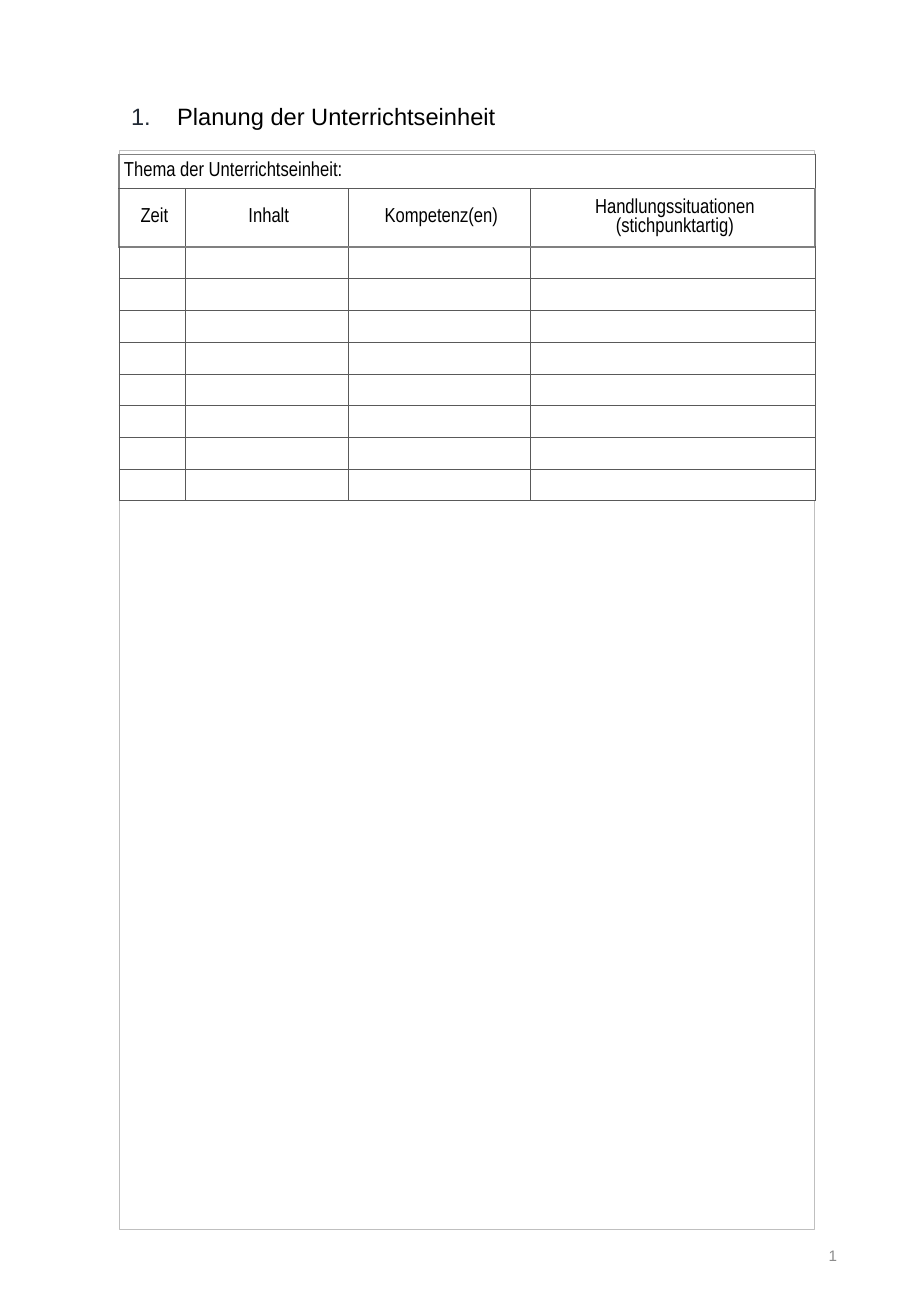
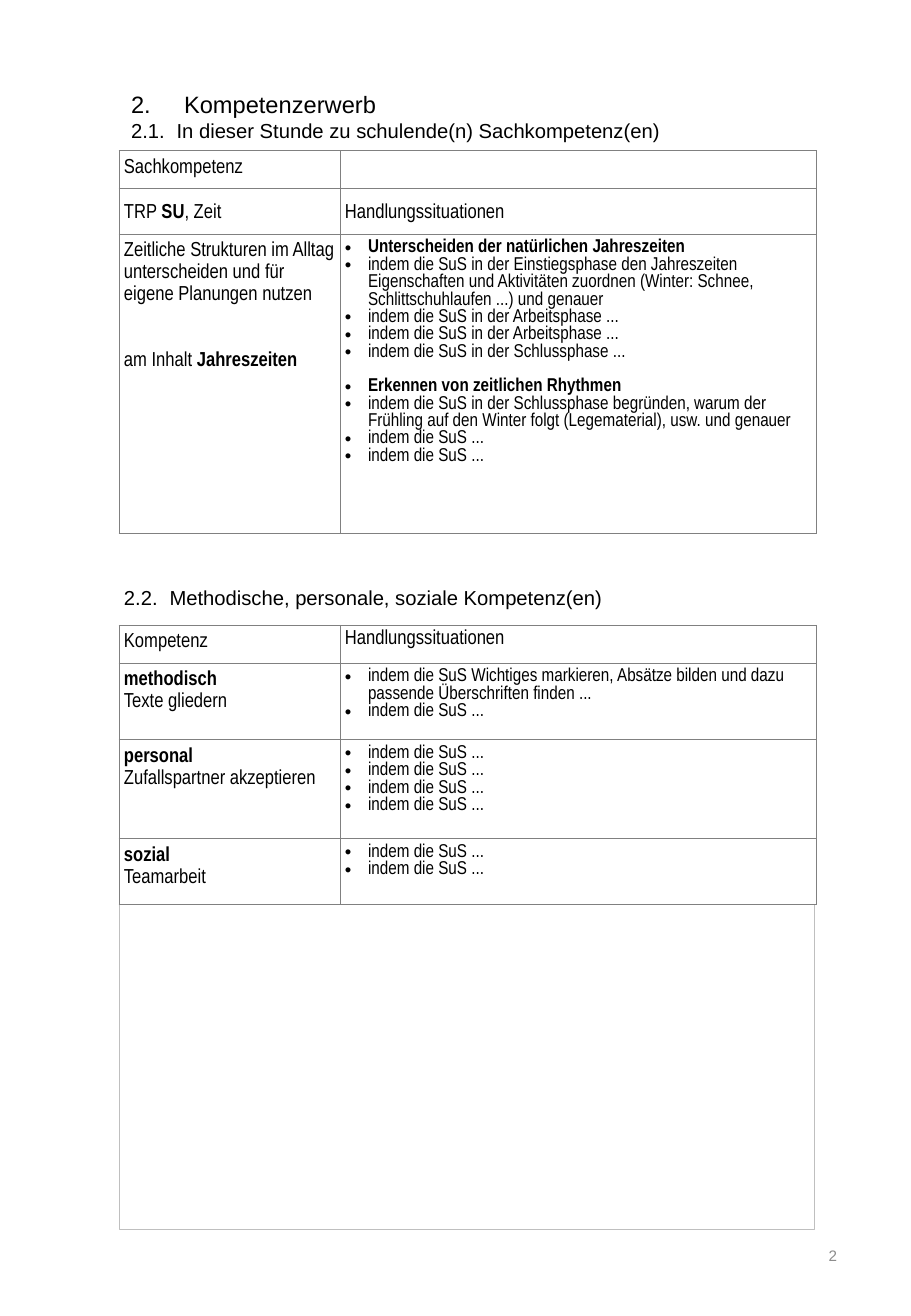
"""Builds two lesson planning pages with a framed planning table and a competence table."""
from lxml import etree
from pptx import Presentation
from pptx.dml.color import RGBColor
from pptx.enum import shapes, text
from pptx.oxml import ns
from pptx.util import Pt

PAGE = (540, 779.8)
LEFT, CONTENT_WIDTH = 70.6, 412.5
FRAME = (LEFT, 89.3, CONTENT_WIDTH, 639.4)
NUMBER_BOX = (381.6, 722.9, 121.7, 41.8)
INSET = 2.88
PLAIN_TABLE = "{2D5ABB26-0587-4C30-8999-92F81FD0307C}"

BLACK, WHITE, PALE, MUTED, NAVY = "000000", "FFFFFF", "BFBFBF", "8C8C8C", "222A35"
THIN, HEAVY, MEDIUM = ("595959", 0.25), ("808080", 1), ("808080", 0.75)

TITLE = {"font": "Arial", "size": 14}
NUMBERED = {**TITLE, "bullet": "number", "indent": 27.36}
CHAPTER = {**TITLE, "tab": 31.4}
SECTION = {"font": "Arial", "size": 12, "tab": 27}
NUMBER = {"font": "Arial", "size": 9, "color": MUTED, "align": text.PP_ALIGN.RIGHT}
PLAIN = {"font": "Arial Narrow", "size": 12}
HEADING = {**PLAIN, "align": text.PP_ALIGN.CENTER}
LABEL = {**PLAIN, "spacing": 1.15}
POINT = {"font": "Arial Narrow", "size": 11, "bullet": "char", "indent": 13.7}

UNIT_TITLE = [("Planung der Unterrichtseinheit", NUMBERED)]
UNIT_COLUMNS = [39, 96.6, 108, 168.9]
UNIT_TOPIC = "Thema der Unterrichtseinheit:"
UNIT_HEADINGS = ["Zeit", "Inhalt", "Kompetenz(en)", "Handlungssituationen (stichpunktartig)"]
UNIT_HEIGHTS = [20, 34.8] + [18.8] * 8

SKILL_TITLE = [
    ("2.\tKompetenzerwerb", CHAPTER),
    ("2.1.\tIn dieser Stunde zu schulende(n) Sachkompetenz(en)", SECTION),
]
SKILL_COLUMNS = [131, 282.3]
OPEN_POINT = ("indem die SuS ...", POINT)
WORK_POINT = ("indem die SuS in der Arbeitsphase ...", POINT)
SKILL_ROWS = [
    (22, [("Sachkompetenz", LABEL)], []),
    (27.3, [("TRP *SU*, Zeit", LABEL)], [("Handlungssituationen", LABEL)]),
    (177.2, [
        ("Zeitliche Strukturen im Alltag unterscheiden und für eigene Planungen nutzen", LABEL),
        ("am Inhalt *Jahreszeiten*", {**LABEL, "before": 26}),
    ], [
        ("*Unterscheiden der natürlichen Jahreszeiten*", POINT),
        ("indem die SuS in der Einstiegsphase den Jahreszeiten Eigenschaften und Aktivitäten "
         "zuordnen (Winter: Schnee, Schlittschuhlaufen ...) und genauer", POINT),
        WORK_POINT,
        WORK_POINT,
        ("indem die SuS in der Schlussphase ...", POINT),
        ("*Erkennen von zeitlichen Rhythmen*", {**POINT, "before": 10}),
        ("indem die SuS in der Schlussphase begründen, warum der Frühling auf den Winter "
         "folgt (Legematerial), usw. und genauer", POINT),
        OPEN_POINT,
        OPEN_POINT,
    ]),
    (27.2, [], None),
    (27.3, [("2.2.\tMethodische, personale, soziale Kompetenz(en)",
             {**SECTION, "spacing": 1.15})], None),
    (22.5, [("Kompetenz", LABEL)], [("Handlungssituationen", PLAIN)]),
    (45, [("*methodisch*", LABEL), ("Texte gliedern", LABEL)], [
        ("indem die SuS Wichtiges markieren, Absätze bilden und dazu passende "
         "Überschriften finden ...", POINT),
        OPEN_POINT,
    ]),
    (58.7, [("*personal*", LABEL), ("Zufallspartner akzeptieren", LABEL)], [OPEN_POINT] * 4),
    (38.5, [("*sozial*", LABEL), ("Teamarbeit", LABEL)], [OPEN_POINT] * 2),
]
CENTERED_ROW = 1


def rgb(value):
    """Return a colour from its hex string."""
    return RGBColor.from_string(value)


def child(parent, tag, **attributes):
    """Append a DrawingML element and return it."""
    element = etree.SubElement(parent, ns.qn("a:" + tag))
    for key, value in attributes.items():
        element.set(key, str(value))
    return element


def assign(target, values):
    """Set every attribute named in a dict."""
    for key, value in values.items():
        setattr(target, key, value)


def add_list_marks(paragraph, style):
    """Add bullet, number or tab stop to a paragraph."""
    props = paragraph._p.get_or_add_pPr()
    if "bullet" in style:
        indent = Pt(style["indent"])
        props.set("marL", str(indent))
        props.set("indent", str(-indent))
        if style["bullet"] == "number":
            child(child(props, "buClr"), "srgbClr", val=NAVY)
        child(props, "buFont", typeface="Arial")
        if style["bullet"] == "number":
            child(props, "buAutoNum", type="arabicPeriod")
        else:
            child(props, "buChar", char="•")
    if "tab" in style:
        child(child(props, "tabLst"), "tab", pos=Pt(style["tab"]), algn="l")


def write(frame, paragraphs):
    """Write styled paragraphs, with bold parts between asterisks."""
    for index, (content, style) in enumerate(paragraphs):
        paragraph = frame.add_paragraph() if index else frame.paragraphs[0]
        assign(paragraph, {
            "alignment": style.get("align", text.PP_ALIGN.LEFT),
            "line_spacing": style.get("spacing", 1.0),
            "space_before": Pt(style.get("before", 0)),
        })
        add_list_marks(paragraph, style)
        for part, words in enumerate(content.split("*")):
            if words:
                run = paragraph.add_run()
                run.text = words
                assign(run.font, {"name": style["font"], "size": Pt(style["size"]),
                                  "bold": part % 2 == 1})
                run.font.color.rgb = rgb(style.get("color", BLACK))
    if not paragraphs:
        child(frame.paragraphs[0]._p, "endParaRPr", sz=800)


def add_text(slide, box, paragraphs, **frame_format):
    """Add a wrapping text box."""
    frame = slide.shapes.add_textbox(*map(Pt, box)).text_frame
    assign(frame, {"word_wrap": True, **frame_format})
    write(frame, paragraphs)


def add_page(deck, number, title, title_top, title_height, anchor):
    """Add a page with frame, title and page number."""
    slide = deck.slides.add_slide(deck.slide_layouts[6])
    frame = slide.shapes.add_shape(shapes.MSO_SHAPE.RECTANGLE, *map(Pt, FRAME))
    frame.shadow.inherit = False
    frame.fill.background()
    frame.line.color.rgb = rgb(PALE)
    frame.line.width = Pt(0.5)
    add_text(slide, (LEFT, title_top, CONTENT_WIDTH, title_height), title,
             vertical_anchor=anchor, auto_size=text.MSO_AUTO_SIZE.SHAPE_TO_FIT_TEXT)
    add_text(slide, NUMBER_BOX, [(str(number), NUMBER)],
             vertical_anchor=text.MSO_ANCHOR.MIDDLE)
    return slide


def add_grid(slide, top, columns, heights):
    """Add an unstyled table with the given column widths and row heights."""
    table = slide.shapes.add_table(len(heights), len(columns), Pt(LEFT), Pt(top),
                                   Pt(sum(columns)), Pt(sum(heights))).table
    assign(table, {"first_row": False, "horz_banding": False})
    table._tbl.tblPr.find(ns.qn("a:tableStyleId")).text = PLAIN_TABLE
    for column, width in zip(table.columns, columns):
        column.width = Pt(width)
    for row, height in zip(table.rows, heights):
        row.height = Pt(height)
    return table


def fill_cell(cell, paragraphs, borders, anchor=text.MSO_ANCHOR.TOP, right=INSET):
    """Write a cell and draw its borders, given by side as L, R, T and B."""
    assign(cell, {"margin_left": Pt(INSET), "margin_right": Pt(right), "margin_top": Pt(INSET),
                  "margin_bottom": Pt(INSET), "vertical_anchor": anchor})
    write(cell.text_frame, paragraphs)
    props = cell._tc.get_or_add_tcPr()
    for side in "LRTB":
        if side in borders:
            color, width = borders[side]
            line = child(props, "ln" + side, w=Pt(width))
            child(child(line, "solidFill"), "srgbClr", val=color)
        else:
            child(child(props, "ln" + side, w=0), "noFill")
    cell.fill.solid()
    cell.fill.fore_color.rgb = rgb(WHITE)


def add_unit_table(slide):
    """Add the planning table with topic, headings and empty rows."""
    table = add_grid(slide, 91.4, UNIT_COLUMNS, UNIT_HEIGHTS)
    last = len(UNIT_COLUMNS) - 1
    table.cell(0, 0).merge(table.cell(0, last))
    for row in range(len(UNIT_HEIGHTS)):
        for column, heading in enumerate(UNIT_HEADINGS):
            content = []
            if row == 0 and column == 0:
                content = [(UNIT_TOPIC, PLAIN)]
            elif row == 1:
                content = [(heading, HEADING)]
            borders = {
                "L": HEAVY if row < 2 and column == 0 else THIN,
                "R": HEAVY if row < 2 and column == last else THIN,
                "T": HEAVY if row in (0, 2) else THIN,
                "B": HEAVY if row == 1 else THIN,
            }
            fill_cell(table.cell(row, column), content, borders, text.MSO_ANCHOR.MIDDLE, 0)


def add_skill_table(slide):
    """Add the competence table, with merged rows where the right part is None."""
    table = add_grid(slide, 89.3, SKILL_COLUMNS, [row[0] for row in SKILL_ROWS])
    merged = [right is None for _, _, right in SKILL_ROWS]
    for row, (_, left, right) in enumerate(SKILL_ROWS):
        sides = "LRTB"
        if merged[row]:
            table.cell(row, 0).merge(table.cell(row, 1))
            sides = ("" if merged[row - 1] else "T") + ("" if merged[row + 1] else "B")
        borders = dict.fromkeys(sides, MEDIUM)
        anchor = text.MSO_ANCHOR.MIDDLE if row == CENTERED_ROW else text.MSO_ANCHOR.TOP
        for column, content in enumerate((left, right or [])):
            fill_cell(table.cell(row, column), content, borders, anchor)


def main():
    """Build and save the pages."""
    deck = Presentation()
    deck.slide_width, deck.slide_height = map(Pt, PAGE)
    add_unit_table(add_page(deck, 1, UNIT_TITLE, 56.9, 24.5, text.MSO_ANCHOR.TOP))
    add_skill_table(add_page(deck, 2, SKILL_TITLE, 49.7, 38.9, text.MSO_ANCHOR.MIDDLE))
    deck.save("out.pptx")


if __name__ == "__main__":
    main()
